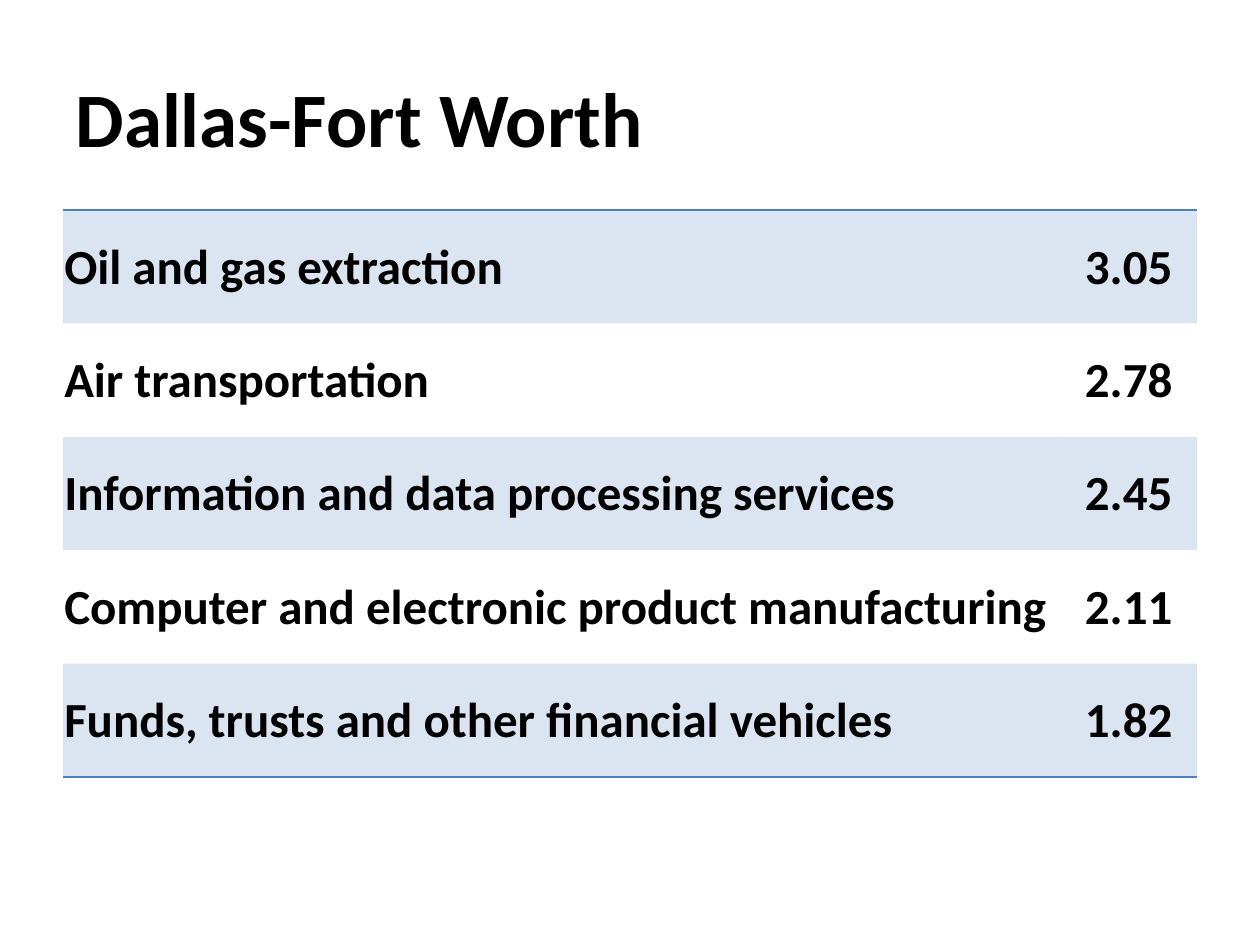
from pptx import Presentation
from pptx.dml.color import RGBColor
from pptx.enum.text import MSO_ANCHOR as Anchor, PP_ALIGN as Align
from pptx.oxml import parse_xml
from pptx.oxml.ns import nsdecls, qn
from pptx.util import Pt

TITLE = "Dallas-Fort Worth"
ROWS = [
    ("Oil and gas extraction", "3.05"),
    ("Air transportation", "2.78"),
    ("Information and data processing services", "2.45"),
    ("Computer and electronic product manufacturing", "2.11"),
    ("Funds, trusts and other financial vehicles", "1.82"),
]
BLUE, BLACK = "4F81BD", "000000"
LEFT, TOP, ROW_H = 36, 120, 64.8
COLS = (570, 78)
PLAIN = "{2D5ABB26-0587-4C30-8999-92F81FD0307C}"  # no style, no grid


def color(text):
    return RGBColor.from_string(text)


def style(para, size, align):
    para.alignment = align
    font = para.font
    font.name, font.size, font.bold = "Calibri", Pt(size), True
    font.color.rgb = color(BLACK)


def rule(cell, side):
    """Draw a thin line on one side of a cell: T or B."""
    cell._tc.get_or_add_tcPr().insert(0, parse_xml(
        f'<a:ln{side} {nsdecls("a")} w="12700"><a:solidFill>'
        f'<a:srgbClr val="{BLUE}"/></a:solidFill></a:ln{side}>'))


def tint(cell):
    """Fill a cell with blue at 20 % opacity."""
    cell.fill.solid()
    cell.fill.fore_color.rgb = color(BLUE)
    rgb = cell._tc.tcPr.find(qn("a:solidFill")).find(qn("a:srgbClr"))
    rgb.append(parse_xml(f'<a:alpha {nsdecls("a")} val="20000"/>'))


deck = Presentation()
deck.slide_width, deck.slide_height = Pt(720), Pt(540)
slide = deck.slides.add_slide(deck.slide_layouts[5])

title = slide.shapes.title
title.left, title.top, title.width, title.height = Pt(36), Pt(21.6), Pt(648), Pt(90)
title.text_frame.text = TITLE
title.text_frame.vertical_anchor = Anchor.MIDDLE
style(title.text_frame.paragraphs[0], 44, Align.LEFT)

table = slide.shapes.add_table(
    len(ROWS), len(COLS), Pt(LEFT), Pt(TOP),
    Pt(sum(COLS)), Pt(ROW_H * len(ROWS))).table
table.first_row = table.horz_banding = False
table._tbl.tblPr.find(qn("a:tableStyleId")).text = PLAIN
for col, width in zip(table.columns, COLS):
    col.width = Pt(width)

for r, row in enumerate(ROWS):
    table.rows[r].height = Pt(ROW_H)
    for c, text in enumerate(row):
        cell = table.cell(r, c)
        cell.text = text
        cell.vertical_anchor = Anchor.MIDDLE
        cell.margin_left = cell.margin_right = cell.margin_top = Pt(0.75)
        cell.margin_bottom = 0
        style(cell.text_frame.paragraphs[0], 28, Align.CENTER if c else Align.LEFT)
        if r % 2:
            cell.fill.background()
        else:
            tint(cell)
        if r == 0:
            rule(cell, "T")
        if r == len(ROWS) - 1:
            rule(cell, "B")

deck.save("out.pptx")
